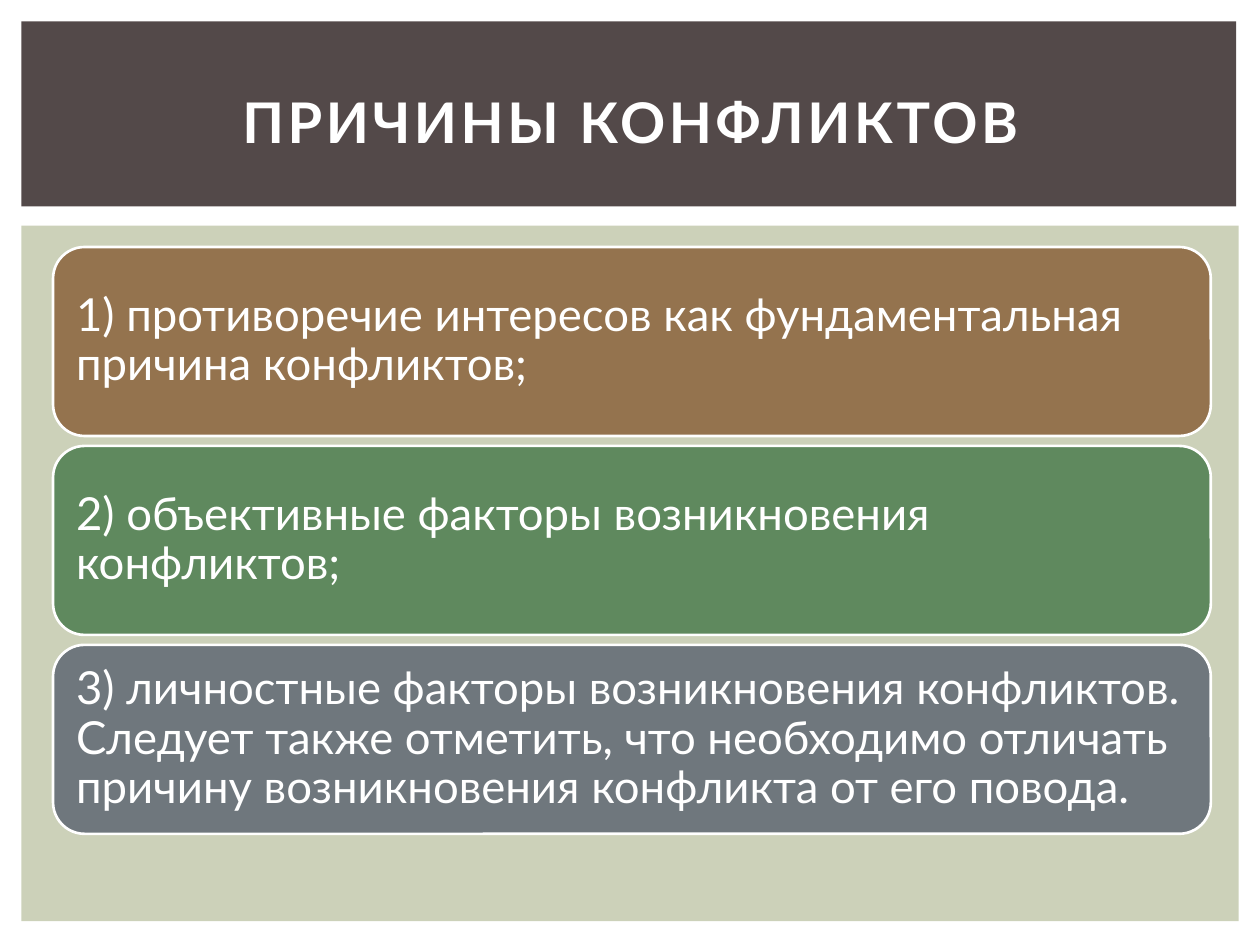
import pptx
import pptx.util
import pptx.dml.color
import pptx.enum.shapes
import pptx.enum.text

Cm = pptx.util.Cm
Pt = pptx.util.Pt
Kind = pptx.enum.shapes.MSO_SHAPE
Align = pptx.enum.text.PP_ALIGN


def tint(code):
    return pptx.dml.color.RGBColor.from_string(code)


class Deck:
    """Holds the text style and the current slide."""

    font = "Lato"
    ink = "FFFFFF"

    def __init__(self, slide):
        self.slide = slide

    def block(self, box, fill, kind=Kind.RECTANGLE):
        shape = self.slide.shapes.add_shape(kind, *map(Cm, box))
        shape.shadow.inherit = False
        shape.fill.solid()
        shape.fill.fore_color.rgb = tint(fill)
        shape.line.fill.background()
        return shape

    def label(self, shape, text, size, align, inset, bold=False):
        frame = shape.text_frame
        frame.text = text
        frame.word_wrap = True
        frame.vertical_anchor = pptx.enum.text.MSO_ANCHOR.MIDDLE
        frame.margin_left = frame.margin_right = Cm(inset)
        frame.margin_top = frame.margin_bottom = Cm(inset)
        line = frame.paragraphs[0]
        line.alignment = align
        run = line.runs[0]
        run.font.name = self.font
        run.font.size = Pt(size)
        run.font.bold = bold
        run.font.color.rgb = tint(self.ink)
        return line

    def card(self, box, fill, text):
        shape = self.block(box, fill, Kind.ROUNDED_RECTANGLE)
        shape.line.color.rgb = tint(self.ink)
        shape.line.width = Pt(1.5)
        line = self.label(shape, text, 26, Align.LEFT, 0.28)
        line.line_spacing = 0.9

    def title(self, box, text):
        shape = self.slide.shapes.add_textbox(*map(Cm, box))
        line = self.label(shape, text, 32, Align.CENTER, 0.13, True)
        line.runs[0]._r.get_or_add_rPr().set("spc", "200")


def main():
    show = pptx.Presentation()
    show.slide_width, show.slide_height = Cm(25.4), Cm(19.05)
    deck = Deck(show.slides.add_slide(show.slide_layouts[6]))
    deck.block((0.43, 4.55, 24.54, 14.02), "CCD1B9")
    deck.block((0.43, 0.43, 24.49, 3.73), "534949")
    causes = [
        ("94734E", "1) противоречие интересов как фундаментальная причина конфликтов;"),
        ("5F895E", "2) объективные факторы возникновения конфликтов;"),
        ("6F777D", "3) личностные факторы возникновения конфликтов. Следует также "
                   "отметить, что необходимо отличать причину возникновения "
                   "конфликта от его повода."),
    ]
    high, gap = 3.81, 0.2
    for rank, (fill, text) in enumerate(causes):
        deck.card((1.07, 4.98 + rank * (high + gap), 23.34, high), fill, text)
    deck.title((1.07, 0.99, 23.29, 2.92), "ПРИЧИНЫ КОНФЛИКТОВ")
    show.save("out.pptx")


if __name__ == "__main__":
    main()
